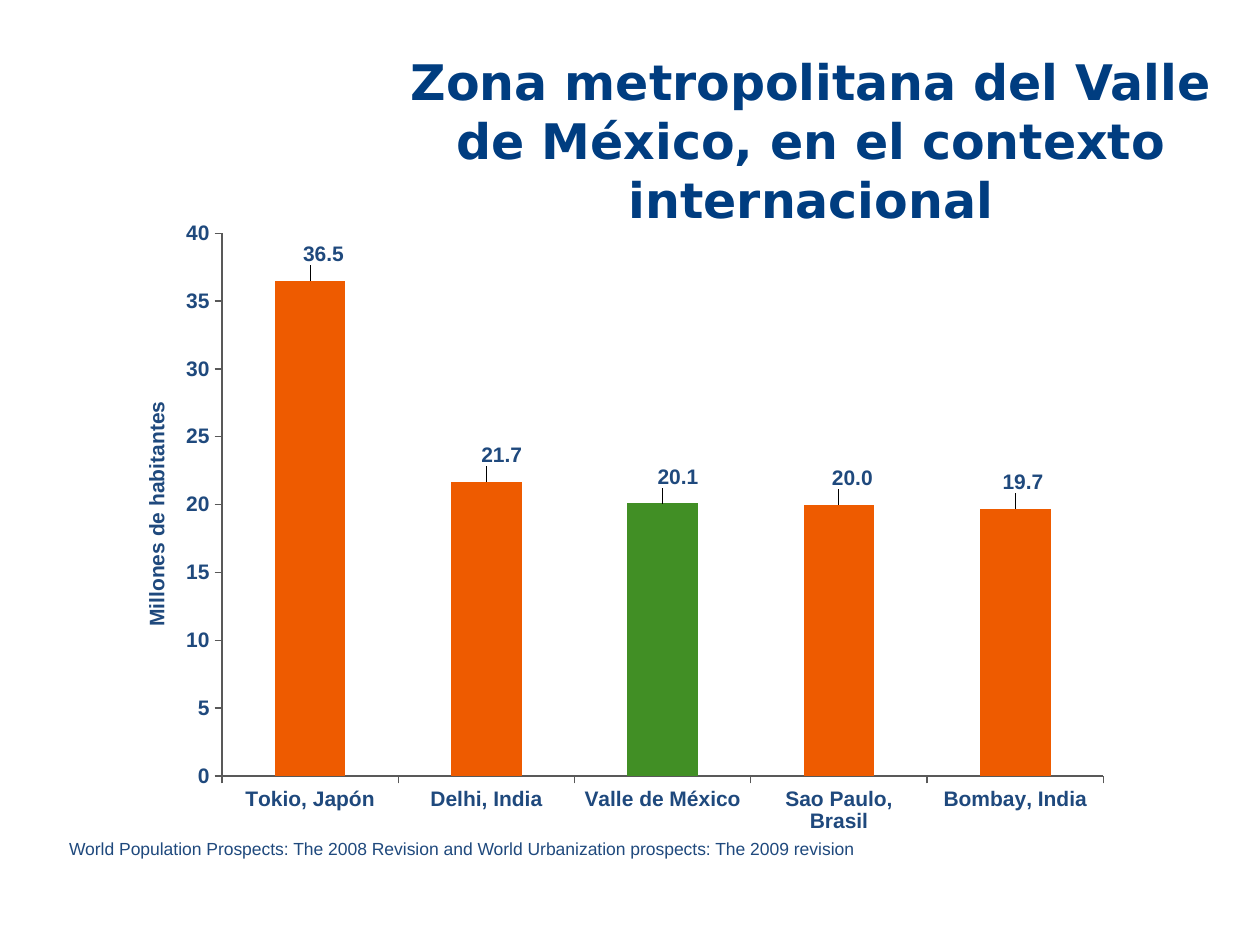
"""Build a slide comparing the Valle de México metropolitan area with other megacities."""
from copy import deepcopy
from dataclasses import dataclass

from lxml.etree import SubElement
from pptx import Presentation
from pptx.chart.axis import CategoryAxis, ValueAxis
from pptx.chart.chart import Chart
from pptx.chart.data import CategoryChartData
from pptx.dml.color import RGBColor
from pptx.enum.chart import XL_CHART_TYPE, XL_LABEL_POSITION, XL_TICK_MARK
from pptx.enum.text import MSO_ANCHOR, MSO_AUTO_SIZE, PP_ALIGN
from pptx.oxml import parse_xml
from pptx.oxml.ns import nsdecls, qn
from pptx.slide import Slide
from pptx.text.text import Font
from pptx.util import Inches, Pt

SLIDE_WIDTH, SLIDE_HEIGHT = Inches(10), Inches(7.5)


@dataclass(frozen=True)
class Theme:
    heading_font: str = "DejaVu Sans"
    body_font: str = "Arial"
    heading: str = "003D80"
    heading_outline: str = "FCFCFD"
    body: str = "1F497D"
    bar: str = "EE5B00"
    highlight: str = "418F25"
    axis: str = "595959"
    heading_size: int = 28
    label_size: int = 12
    source_size: int = 10


@dataclass(frozen=True)
class Area:
    """A rectangle in percent of the slide's width and height."""
    left: float
    top: float
    width: float
    height: float

    def emu(self) -> tuple[int, int, int, int]:
        return (int(SLIDE_WIDTH * self.left / 100), int(SLIDE_HEIGHT * self.top / 100),
                int(SLIDE_WIDTH * self.width / 100), int(SLIDE_HEIGHT * self.height / 100))


@dataclass(frozen=True)
class City:
    name: str
    millions: float
    label_shift: float
    highlighted: bool = False


@dataclass(frozen=True)
class Caption:
    text: str
    area: Area
    size: int
    bold: bool = False
    align: PP_ALIGN = PP_ALIGN.LEFT
    rotation: int = 0


THEME = Theme()
TITLE = "Zona metropolitana del Valle\vde México, en el contexto internacional"
TITLE_AREA = Area(28.7, 5.47, 71.3, 18.27)
CHART_AREA = Area(13.3, 22.13, 75.8, 67.33)
PLOT_SHARES = {"x": 0.057, "y": 0.038, "w": 0.923, "h": 0.853}
LABEL_LIFT = -0.016
CITIES = [
    City("Tokio, Japón", 36.5, 0.014),
    City("Delhi, India", 21.7, 0.016),
    City("Valle de México", 20.1, 0.016, highlighted=True),
    City("Sao Paulo, Brasil", 20.0, 0.014),
    City("Bombay, India", 19.7, 0.008),
]
CAPTIONS = [
    Caption("Millones de habitantes", Area(-6.8, 52.4, 38.4, 4), THEME.label_size,
            bold=True, align=PP_ALIGN.CENTER, rotation=270),
    Caption("World Population Prospects: The 2008 Revision and World Urbanization "
            "prospects: The 2009 revision", Area(4.5, 88, 91.7, 3.6), THEME.source_size),
]


def style_font(font: Font, name: str, size: int, color: str, bold: bool) -> None:
    font.name, font.size, font.bold = name, Pt(size), bold
    font.color.rgb = RGBColor.from_string(color)


def style_label(font: Font) -> None:
    style_font(font, THEME.body_font, THEME.label_size, THEME.body, True)


def write_title(slide: Slide) -> None:
    title = slide.shapes.title
    title.left, title.top, title.width, title.height = TITLE_AREA.emu()
    frame = title.text_frame
    frame.margin_left = frame.margin_right = frame.margin_top = frame.margin_bottom = 0
    frame.word_wrap, frame.auto_size = True, MSO_AUTO_SIZE.NONE
    frame.vertical_anchor = MSO_ANCHOR.TOP
    frame.text = TITLE
    heading = frame.paragraphs[0]
    heading.alignment = PP_ALIGN.CENTER
    style_font(heading.font, THEME.heading_font, THEME.heading_size, THEME.heading, True)
    for run in heading.runs:
        run.font._element.insert(0, parse_xml(
            f'<a:ln {nsdecls("a")} w="{Pt(1.4)}"><a:solidFill>'
            f'<a:srgbClr val="{THEME.heading_outline}"/></a:solidFill></a:ln>'))


def write_caption(slide: Slide, caption: Caption) -> None:
    box = slide.shapes.add_textbox(*caption.area.emu())
    box.rotation = caption.rotation
    frame = box.text_frame
    frame.word_wrap, frame.auto_size = True, MSO_AUTO_SIZE.SHAPE_TO_FIT_TEXT
    frame.text = caption.text
    line = frame.paragraphs[0]
    line.alignment = caption.align
    style_font(line.font, THEME.body_font, caption.size, THEME.body, caption.bold)


def style_axis(axis: CategoryAxis | ValueAxis) -> None:
    axis.has_major_gridlines = False
    axis.major_tick_mark, axis.minor_tick_mark = XL_TICK_MARK.OUTSIDE, XL_TICK_MARK.NONE
    axis.format.line.color.rgb = RGBColor.from_string(THEME.axis)
    axis.format.line.width = Pt(0.75)
    style_label(axis.tick_labels.font)


def place_plot(chart: Chart) -> None:
    plot_area = chart._chartSpace.chart.plotArea
    for layout in plot_area.findall(qn("c:layout")):
        plot_area.remove(layout)
    shares = "".join(f'<c:{side} val="{share}"/>' for side, share in PLOT_SHARES.items())
    plot_area.insert(0, parse_xml(
        f'<c:layout {nsdecls("c")}><c:manualLayout><c:layoutTarget val="inner"/>'
        f'<c:xMode val="edge"/><c:yMode val="edge"/>{shares}</c:manualLayout></c:layout>'))


def label_bars(chart: Chart) -> None:
    labels = chart.plots[0].series[0].data_labels
    labels.show_value = True
    labels.number_format, labels.number_format_is_linked = "#,##0.0", False
    labels.position = XL_LABEL_POSITION.OUTSIDE_END
    style_label(labels.font)
    group = labels._element
    for index, city in enumerate(CITIES):
        label = parse_xml(
            f'<c:dLbl {nsdecls("c")}><c:idx val="{index}"/><c:layout><c:manualLayout>'
            f'<c:x val="{city.label_shift}"/><c:y val="{LABEL_LIFT}"/>'
            f'</c:manualLayout></c:layout></c:dLbl>')
        for tag in ("c:numFmt", "c:txPr", "c:dLblPos"):
            label.append(deepcopy(group.find(qn(tag))))
        for part in ("LegendKey", "Val", "CatName", "SerName", "Percent", "BubbleSize"):
            SubElement(label, qn(f"c:show{part}")).set("val", str(int(part == "Val")))
        group.insert(index, label)


def draw_chart(slide: Slide) -> None:
    population = CategoryChartData()
    population.categories = [city.name for city in CITIES]
    population.add_series("Series 1", [city.millions for city in CITIES])
    chart = slide.shapes.add_chart(
        XL_CHART_TYPE.COLUMN_CLUSTERED, *CHART_AREA.emu(), population).chart
    chart.has_legend = chart.has_title = False
    style_label(chart.font)
    style_axis(chart.category_axis)
    style_axis(chart.value_axis)
    scale = chart.value_axis
    scale.minimum_scale, scale.maximum_scale, scale.major_unit = 0, 40, 5
    scale.tick_labels.number_format, scale.tick_labels.number_format_is_linked = "0", False

    bars = chart.plots[0]
    bars.gap_width, bars.vary_by_categories = 150, False
    series = bars.series[0]
    series.format.fill.solid()
    series.format.fill.fore_color.rgb = RGBColor.from_string(THEME.bar)
    for index, city in enumerate(CITIES):
        if city.highlighted:
            fill = series.points[index].format.fill
            fill.solid()
            fill.fore_color.rgb = RGBColor.from_string(THEME.highlight)
    place_plot(chart)
    label_bars(chart)


def main() -> None:
    deck = Presentation()
    deck.slide_width, deck.slide_height = SLIDE_WIDTH, SLIDE_HEIGHT
    slide = deck.slides.add_slide(deck.slide_layouts.get_by_name("Title Only"))
    write_title(slide)
    draw_chart(slide)
    for caption in CAPTIONS:
        write_caption(slide, caption)
    deck.save("out.pptx")


if __name__ == "__main__":
    main()
